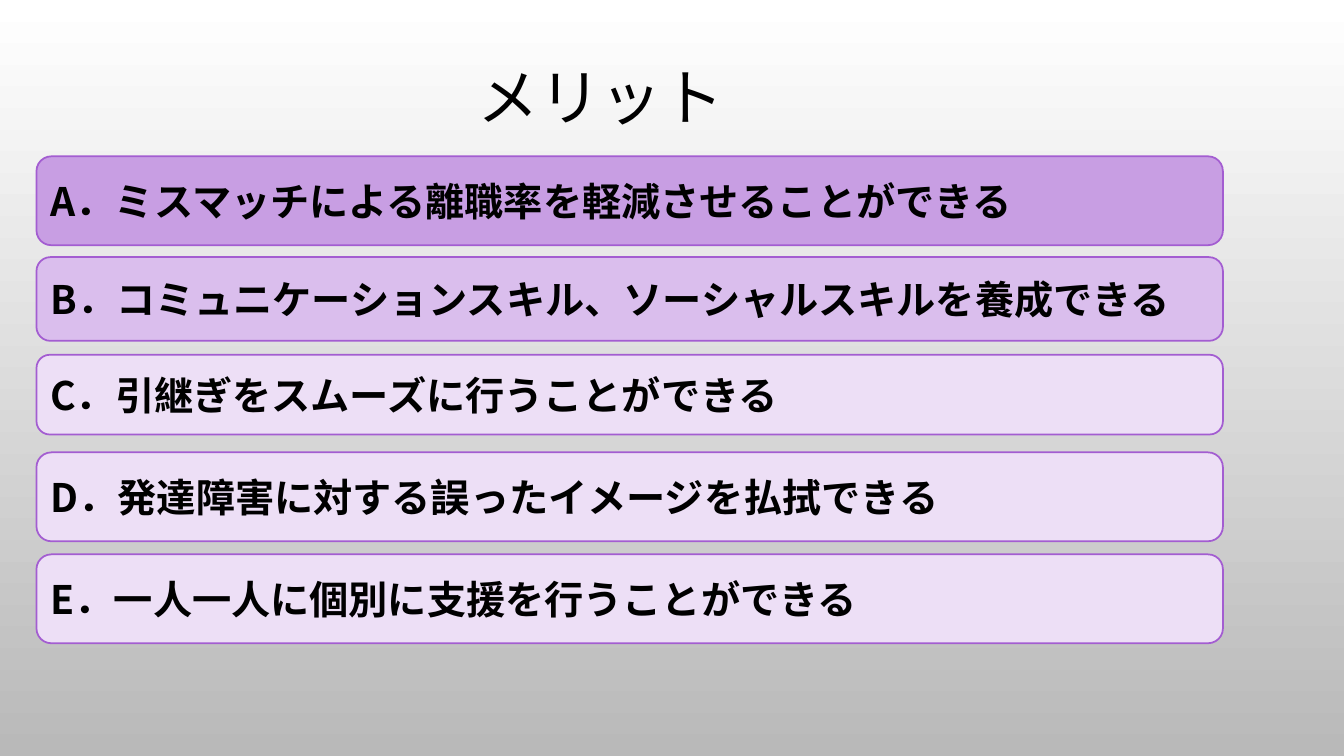
from lxml import etree
from pptx import Presentation
from pptx import util as u
from pptx.dml import color
from pptx.enum import shapes, text
from pptx.oxml import ns

COLORS = {
    "top": "FFFFFF",
    "bottom": "B9B9B9",
    "text": "000000",
    "border": "A35DD1",
    "strong": "C89EE3",
    "medium": "DABEED",
    "light": "EDDFF6",
}

MERITS = [
    ("A．ミスマッチによる離職率を軽減させることができる", "strong", 3.94, 2.24),
    ("B．コミュニケーションスキル、ソーシャルスキルを養成できる", "medium", 6.48, 2.11),
    ("C．引継ぎをスムーズに行うことができる", "light", 8.94, 2.01),
    ("D．発達障害に対する誤ったイメージを払拭できる", "light", 11.4, 2.24),
    ("E．一人一人に個別に支援を行うことができる", "light", 13.97, 2.24),
]


class MeritSlide:
    font_name = "Noto Sans CJK JP"
    title_format = {"size": u.Pt(44), "bold": False}
    bar_format = {"size": u.Pt(28), "bold": True}

    def __init__(self, presentation):
        self.slide = presentation.slides.add_slide(presentation.slide_layouts[6])

    def rgb(self, key):
        return color.RGBColor.from_string(COLORS[key])

    def background(self):
        fill = self.slide.background.fill
        fill.gradient()
        fill.gradient_angle = 270
        for stop, position, key in zip(fill.gradient_stops, (0, 1), ("top", "bottom")):
            stop.position = position
            stop.color.rgb = self.rgb(key)

    def label(self, shape, wording, formats, alignment):
        shape.text_frame.word_wrap = True
        paragraph = shape.text_frame.paragraphs[0]
        paragraph.alignment = alignment
        run = paragraph.add_run()
        run.text = wording
        run.font.color.rgb = self.rgb("text")
        for name, value in {"name": self.font_name, **formats}.items():
            setattr(run.font, name, value)
        properties = run._r.get_or_add_rPr()
        etree.SubElement(properties, ns.qn("a:ea"), typeface=self.font_name)

    def title(self, wording, left, top, width, height):
        shape = self.slide.shapes.add_textbox(
            u.Cm(left), u.Cm(top), u.Cm(width), u.Cm(height))
        self.label(shape, wording, self.title_format, text.PP_ALIGN.CENTER)
        shape.text_frame.auto_size = text.MSO_AUTO_SIZE.SHAPE_TO_FIT_TEXT

    def bar(self, wording, fill, top, height):
        shape = self.slide.shapes.add_shape(
            shapes.MSO_SHAPE.ROUNDED_RECTANGLE,
            u.Cm(0.92), u.Cm(top), u.Cm(29.9), u.Cm(height))
        shape.shadow.inherit = False
        shape.fill.solid()
        shape.fill.fore_color.rgb = self.rgb(fill)
        shape.line.color.rgb = self.rgb("border")
        shape.line.width = u.Pt(1.25)
        shape.text_frame.vertical_anchor = text.MSO_ANCHOR.MIDDLE
        self.label(shape, wording, self.bar_format, text.PP_ALIGN.LEFT)


def main():
    presentation = Presentation()
    presentation.slide_width = u.Cm(33.87)
    presentation.slide_height = u.Cm(19.05)
    merit_slide = MeritSlide(presentation)
    merit_slide.background()
    for wording, fill, top, height in MERITS:
        merit_slide.bar(wording, fill, top, height)
    merit_slide.title("メリット", 11.33, 1.35, 7.62, 2.13)
    presentation.save("out.pptx")


if __name__ == "__main__":
    main()
